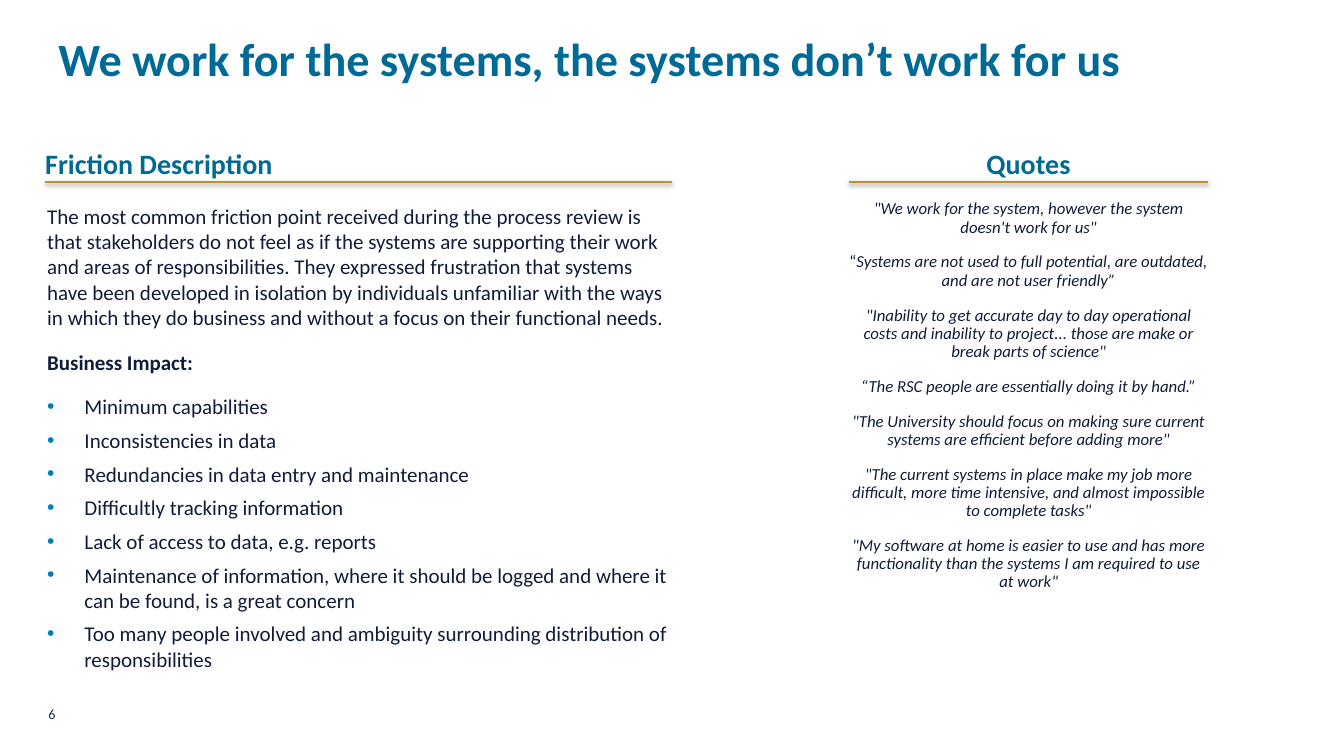
from lxml.etree import SubElement
from pptx import Presentation
from pptx.dml.color import RGBColor
from pptx.enum.shapes import MSO_CONNECTOR
from pptx.enum.text import MSO_ANCHOR, MSO_AUTO_SIZE, PP_ALIGN
from pptx.oxml.ns import qn
from pptx.util import Cm, Pt

COLORS = {"teal": "006A96", "ink": "101D3A", "navy": "13294B",
          "gold": "C69214", "dot": "007DBA", "shade": "000000"}
LEFT, MID = PP_ALIGN.LEFT, PP_ALIGN.CENTER


def set_font(font, size, color, **style):
    values = {"name": "Calibri", "size": Pt(size), "bold": False, "italic": False}
    for key, value in (values | style).items():
        setattr(font, key, value)
    font.color.rgb = RGBColor.from_string(COLORS[color])


def set_frame(shape, left, top, width, height, **style):
    place = {"left": left, "top": top, "width": width, "height": height}
    for key, value in place.items():
        setattr(shape, key, Cm(value))
    frame = shape.text_frame
    values = {"word_wrap": True, "auto_size": MSO_AUTO_SIZE.NONE,
              "vertical_anchor": MSO_ANCHOR.TOP, "margin_left": 0,
              "margin_top": 0, "margin_right": 0, "margin_bottom": 0}
    for key, value in (values | style).items():
        setattr(frame, key, value)
    return frame


deck = Presentation()
deck.slide_width, deck.slide_height = Cm(33.87), Cm(19.05)
slide = deck.slides.add_slide(deck.slide_layouts[5])
shapes = slide.shapes

# Title
frame = set_frame(shapes.title, 1.22, 0.76, 30.48, 3.18,
                  margin_left=Cm(0.25), margin_right=Cm(0.25))
frame.text = "We work for the systems, the systems don’t work for us"
para = frame.paragraphs[0]
para.alignment = LEFT
set_font(para.font, 33, "teal", bold=True)

# Section headings, each over a gold rule with a soft shadow
for name, left, width, align in [("Friction Description", 1.14, 15.8, LEFT),
                                 ("Quotes", 21.39, 9.06, MID)]:
    frame = set_frame(shapes.add_textbox(0, 0, 0, 0), left, 3.68, width, 0.86)
    frame.text = name
    para = frame.paragraphs[0]
    para.alignment = align
    set_font(para.font, 20, "teal", bold=True)

    rule = shapes.add_connector(MSO_CONNECTOR.STRAIGHT, Cm(left), Cm(4.58),
                                Cm(left + width), Cm(4.58))
    rule.line.color.rgb = RGBColor.from_string(COLORS["gold"])
    rule.line.width = Pt(1.5)
    effect = SubElement(rule._element.spPr, qn("a:effectLst"))
    shadow = SubElement(effect, qn("a:outerShdw"), blurRad=str(Pt(3.1)),
                        dist=str(Pt(1.6)), dir="5400000", rotWithShape="0")
    shade = SubElement(shadow, qn("a:srgbClr"), val=COLORS["shade"])
    SubElement(shade, qn("a:alpha"), val="38000")

# Friction description and its impact
INTRO = ("The most common friction point received during the process review is "
         "that stakeholders do not feel as if the systems are supporting their "
         "work and areas of responsibilities. They expressed frustration that "
         "systems have been developed in isolation by individuals unfamiliar "
         "with the ways in which they do business and without a focus on their "
         "functional needs.")
IMPACT = "Business Impact:"
POINTS = [
    "Minimum capabilities",
    "Inconsistencies in data",
    "Redundancies in data entry and maintenance",
    "Difficultly tracking information",
    "Lack of access to data, e.g. reports",
    "Maintenance of information, where it should be logged and where it can be "
    "found, is a great concern",
    "Too many people involved and ambiguity surrounding distribution of "
    "responsibilities",
]
frame = set_frame(shapes.add_textbox(0, 0, 0, 0), 1.19, 5.13, 15.75, 12.75)
for i, text in enumerate([INTRO, IMPACT] + POINTS):
    para = frame.add_paragraph() if i else frame.paragraphs[0]
    para.text = text
    para.space_before = Pt(6 if i else 0)
    if text in POINTS:
        props = para._p.get_or_add_pPr()
        props.set("marL", str(Cm(0.94)))
        props.set("indent", str(-Cm(0.94)))
        tint = SubElement(props, qn("a:buClr"))
        SubElement(tint, qn("a:srgbClr"), val=COLORS["dot"])
        SubElement(props, qn("a:buFont"), typeface="Arial")
        SubElement(props, qn("a:buChar"), char="•")
    else:
        para.space_after = Pt(8)
    set_font(para.font, 15, "ink", bold=text == IMPACT)

# Quotes, as pairs of upright and slanted text
QUOTES = [
    ("", "\"We work for the system, however the system doesn't work for us\""),
    ("“", "Systems are not used to full potential, are outdated, and are not "
          "user friendly”"),
    ("", "\"Inability to get accurate day to day operational costs and inability "
         "to project... those are make or break parts of science\""),
    ("", "“The RSC people are essentially doing it by hand.”"),
    ("", "\"The University should focus on making sure current systems are "
         "efficient before adding more\""),
    ("", "\"The current systems in place make my job more difficult, more time "
         "intensive, and almost impossible to complete tasks\""),
    ("", "\"My software at home is easier to use and has more functionality than "
         "the systems I am required to use at work\""),
]
frame = set_frame(shapes.add_textbox(0, 0, 0, 0), 21.39, 5.05, 9.07, 11.13)
for i, pair in enumerate(QUOTES):
    para = frame.add_paragraph() if i else frame.paragraphs[0]
    values = {"alignment": MID, "line_spacing": 0.9,
              "space_before": Pt(6 if i else 0), "space_after": Pt(6)}
    for key, value in values.items():
        setattr(para, key, value)
    for text, slant in zip(pair, (False, True)):
        if text:
            run = para.add_run()
            run.text = text
            set_font(run.font, 12, "ink", italic=slant)

# Page number
frame = set_frame(shapes.add_textbox(0, 0, 0, 0), 1.22, 17.48, 7.62, 1.02,
                  vertical_anchor=MSO_ANCHOR.MIDDLE)
frame.text = "6"
set_font(frame.paragraphs[0].font, 10, "navy")

deck.save("out.pptx")
